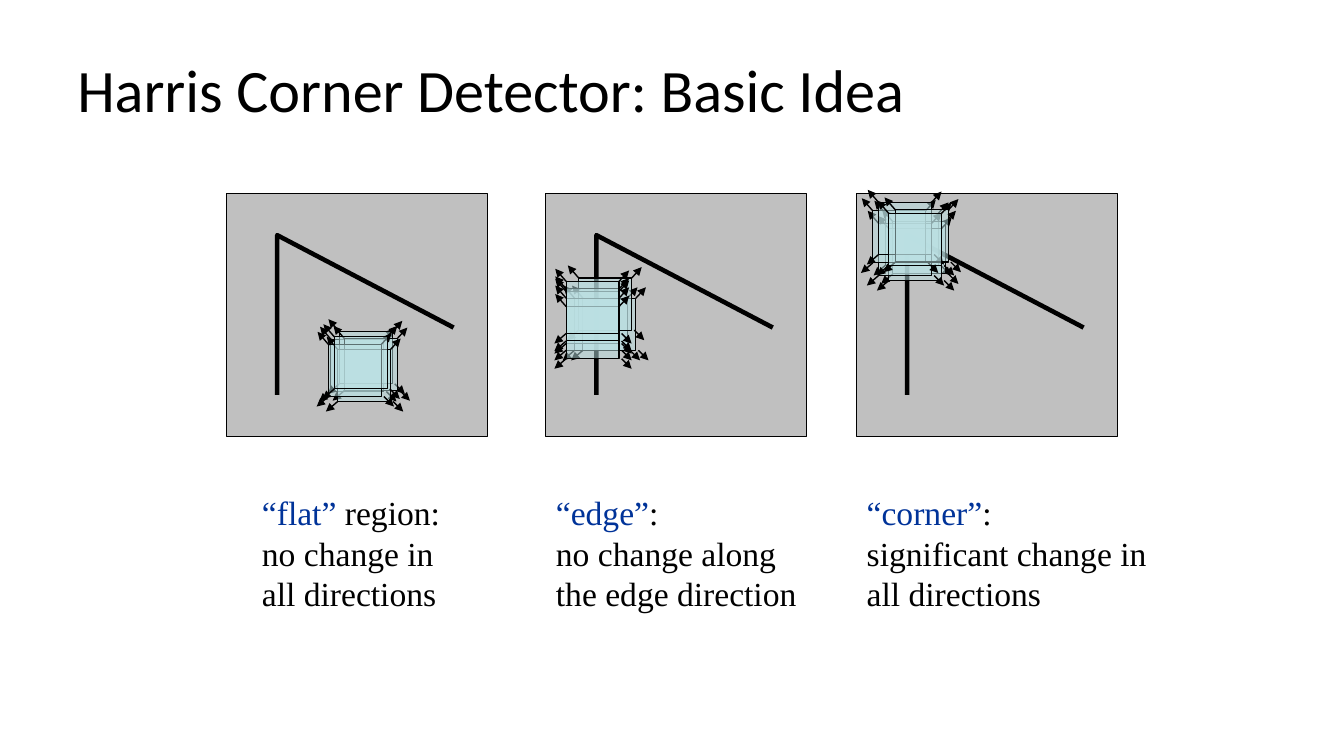
from lxml import etree
from pptx import Presentation
from pptx import util as u
from pptx.dml.color import RGBColor
from pptx.enum import shapes, text
from pptx.oxml import ns

COLUMNS, ROWS = 160, 90  # square cells, twelve to the inch
CELL = u.Inches(1 / 12)


def color(value):
    return RGBColor.from_string(value)


def write(para, words, font="Times New Roman", size=24, ink="000000"):
    span = para.add_run()
    span.text = words
    span.font.name = font
    span.font.size = u.Pt(size)
    span.font.color.rgb = color(ink)


class Sketch:
    """Style and current slide; lengths are grid columns and rows."""
    black, gray, glass, accent = "000000", "C0C0C0", "BBE0E3", "003399"

    def __init__(self, page):
        self.page = page

    def cells(self, *lengths):
        return [round(length * CELL) for length in lengths]

    def outline(self, item, width):
        item.line.color.rgb = color(self.black)
        item.line.width = u.Pt(width)

    def title(self, words, *place):
        box = self.page.shapes.title
        box.left, box.top, box.width, box.height = self.cells(*place)
        box.text_frame.auto_size = text.MSO_AUTO_SIZE.NONE
        box.text_frame.vertical_anchor = text.MSO_ANCHOR.MIDDLE
        para = box.text_frame.paragraphs[0]
        para.alignment = text.PP_ALIGN.LEFT
        write(para, words, font="Calibri", size=43)

    def rectangle(self, parent, place, fill, opacity=100):
        box = parent.add_shape(shapes.MSO_SHAPE.RECTANGLE, *self.cells(*place))
        box.shadow.inherit = False
        box.fill.solid()
        box.fill.fore_color.rgb = color(fill)
        if opacity < 100:
            tint = box.fill._xPr.find(".//" + ns.qn("a:srgbClr"))
            etree.SubElement(tint, ns.qn("a:alpha"), val=str(opacity * 1000))
        self.outline(box, 0.75)

    def arrow(self, parent, *ends):
        line = parent.add_connector(shapes.MSO_CONNECTOR.STRAIGHT, *self.cells(*ends))
        self.outline(line, 1)
        etree.SubElement(line.line._get_or_add_ln(), ns.qn("a:tailEnd"), type="triangle")
        etree.SubElement(line._element.spPr, ns.qn("a:effectLst"))

    def corner(self, left, top):
        """The bent edge that every panel shows."""
        points = [self.cells(left + x, top + y) for x, y in [(6, 24), (6, 5), (27, 16)]]
        builder = self.page.shapes.build_freeform(*points[0])
        builder.add_line_segments(points[1:], close=False)
        bend = builder.convert_to_shape()
        bend.shadow.inherit = False
        bend.fill.background()
        self.outline(bend, 3.25)

    def window(self, left, top):
        """A see-through square with an arrow out of each corner."""
        group = self.page.shapes.add_group_shape().shapes
        self.rectangle(group, (left, top, 6.3, 6.2), self.glass, opacity=50)
        for x1, y1, x2, y2 in [(6.3, 0, 7.5, -1.3), (6.6, 6.2, 7.8, 7.4),
                               (0, 6.2, -1.4, 7.4), (0, 0, -1.3, -1.5)]:
            self.arrow(group, left + x1, top + y1, left + x2, top + y2)

    def panel(self, left, top, windows):
        self.rectangle(self.page.shapes, (left, top, 31, 29), self.gray)
        self.corner(left, top)
        for x, y in windows:
            self.window(left + x, top + y)

    def caption(self, place, term, rest, effect):
        box = self.page.shapes.add_textbox(*self.cells(*place))
        box.text_frame.word_wrap = True
        box.text_frame.auto_size = text.MSO_AUTO_SIZE.SHAPE_TO_FIT_TEXT
        para = box.text_frame.paragraphs[0]
        write(para, term, ink=self.accent)
        write(para, rest)
        para.add_line_break()
        write(para, effect)


# Each case: panel column, window offsets, caption place, caption words
CASES = [
    (27, [(12.4, 17.4), (13.4, 16.5), (14, 17.3), (13.2, 18.6), (12.1, 18), (12.8, 17.1)],
     (30, 58, 27, 15.7), ("“flat”", " region:", "no change in all directions")),
    (65, [(3.4, 12.5), (4.4, 12.5), (3.9, 10.1), (2.4, 11.7), (2.4, 12.5), (2.4, 13.5),
          (2.4, 11.4), (2.4, 10.5)],
     (65, 58, 32, 15.7), ("“edge”", ":", "no change along the edge direction")),
    (102, [(3.4, 2.4), (4.3, 3.4), (3.8, 4.2), (2.6, 3.6), (1.9, 2.1), (2.6, 1.1),
           (4.6, 2), (3.8, 2.4)],
     (102, 58, 40, 20.6), ("“corner”", ":", "significant change in all directions")),
]


def main():
    deck = Presentation()
    deck.slide_width, deck.slide_height = COLUMNS * CELL, ROWS * CELL
    title_only = deck.slide_layouts[5]
    sketch = Sketch(deck.slides.add_slide(title_only))

    # Heading
    sketch.title("Harris Corner Detector: Basic Idea", 8, 3, 149, 15)

    # Three panels with their captions
    for column, windows, place, words in CASES:
        sketch.panel(column, 23, windows)
        sketch.caption(place, *words)

    deck.save("out.pptx")


if __name__ == "__main__":
    main()
